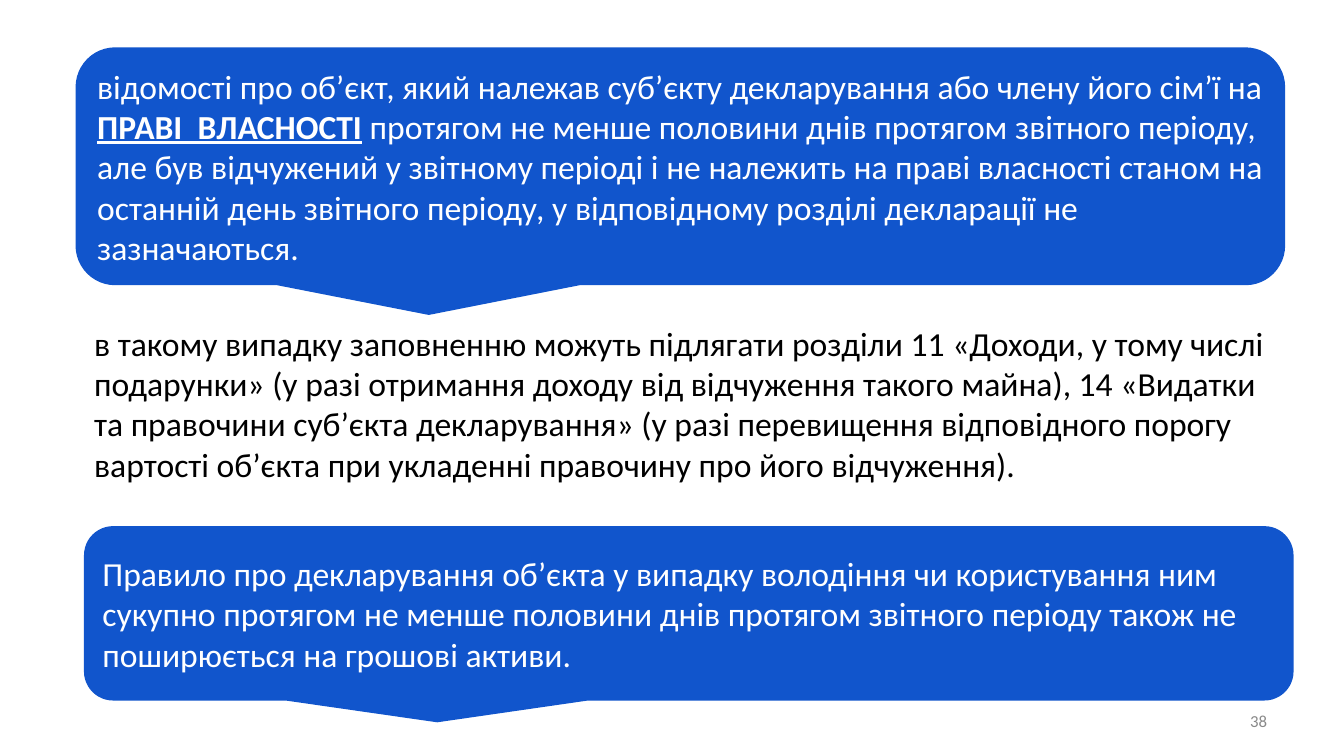
"""Build the slide on declaring alienated property and monetary assets."""
import dataclasses
import typing

import pptx
import pptx.dml.color
import pptx.enum.shapes
import pptx.enum.text
import pptx.oxml
import pptx.oxml.ns
import pptx.presentation
import pptx.shapes.autoshape
import pptx.slide
import pptx.text.text
import pptx.util

COLORS = {"callout": "1155CC", "light": "FFFFFF", "dark": "000000", "number": "898989"}
FONT = "Calibri"
COLUMNS, ROWS = 160, 90
CELL = pptx.util.Inches(1 / 12)
CALLOUT_ADJUSTMENTS = (-0.208, 0.625, 0.167)
ALIGN = pptx.enum.text.PP_ALIGN
ANCHOR = pptx.enum.text.MSO_ANCHOR


class Area(typing.NamedTuple):
    left: float
    top: float
    width: float
    height: float

    def lengths(self) -> list[int]:
        return [round(cells * CELL) for cells in self]


class Run(typing.NamedTuple):
    text: str
    emphasis: bool = False


@dataclasses.dataclass(frozen=True)
class Block:
    area: Area
    runs: tuple[Run, ...]
    color: str
    size: int = 24
    align: ALIGN = ALIGN.LEFT
    anchor: ANCHOR = ANCHOR.MIDDLE
    vertical_inset: float = 0.05


OWNERSHIP = Block(
    Area(9, 5.64, 144, 28.32),
    (
        Run("відомості про об’єкт, який належав суб’єкту декларування або члену його сім’ї на "),
        Run("ПРАВІ  ВЛАСНОСТІ", emphasis=True),
        Run(
            " протягом не менше половини днів протягом звітного періоду, але був відчужений "
            "у звітному періоді і не належить на праві власності станом на останній день "
            "звітного періоду, у відповідному розділі декларації не зазначаються."
        ),
    ),
    "light",
    vertical_inset=0.1,
)
SECTIONS = Block(
    Area(10, 37.8, 144, 20.76),
    (
        Run(
            "в такому випадку заповненню можуть підлягати розділи 11 «Доходи, у тому числі "
            "подарунки» (у разі отримання доходу від відчуження такого майна), 14 «Видатки та "
            "правочини суб’єкта декларування» (у разі перевищення відповідного порогу вартості "
            "об’єкта при укладенні правочину про його відчуження)."
        ),
    ),
    "dark",
    anchor=ANCHOR.TOP,
)
NUMBER = Block(Area(114.72, 83.4, 37.32, 4.8), (Run("38"),), "number", 12, ALIGN.RIGHT)
MONEY = Block(
    Area(10, 62.64, 144, 20.76),
    (
        Run(
            "Правило про декларування об’єкта у випадку володіння чи користування ним сукупно "
            "протягом не менше половини днів протягом звітного періоду також не поширюється на "
            "грошові активи."
        ),
    ),
    "light",
    vertical_inset=0.1,
)


def rgb(name: str) -> pptx.dml.color.RGBColor:
    return pptx.dml.color.RGBColor.from_string(COLORS[name])


def write(frame: pptx.text.text.TextFrame, block: Block) -> None:
    frame.word_wrap = True
    frame.auto_size = pptx.enum.text.MSO_AUTO_SIZE.NONE
    frame.vertical_anchor = block.anchor
    frame.margin_left = frame.margin_right = pptx.util.Inches(0.1)
    frame.margin_top = frame.margin_bottom = pptx.util.Inches(block.vertical_inset)
    paragraph = frame.paragraphs[0]
    paragraph.alignment = block.align
    paragraph.space_before = pptx.util.Pt(0)
    for item in block.runs:
        run = paragraph.add_run()
        run.text = item.text
        run.font.name = FONT
        run.font.size = pptx.util.Pt(block.size)
        run.font.bold = run.font.underline = item.emphasis
        run.font.color.rgb = rgb(block.color)


def draw_callout(slide: pptx.slide.Slide, block: Block) -> None:
    kind = pptx.enum.shapes.MSO_SHAPE.ROUNDED_RECTANGULAR_CALLOUT
    shape = slide.shapes.add_shape(kind, *block.area.lengths())
    for index, value in enumerate(CALLOUT_ADJUSTMENTS):
        shape.adjustments[index] = value
    shape.shadow.inherit = False
    shape.fill.solid()
    shape.fill.fore_color.rgb = rgb("callout")
    shape.line.fill.background()
    write(shape.text_frame, block)


def draw_body(slide: pptx.slide.Slide, block: Block) -> None:
    body = slide.placeholders[1]
    body.left, body.top, body.width, body.height = block.area.lengths()
    slide.shapes.element.append(body.element)
    write(body.text_frame, block)
    properties = body.text_frame.paragraphs[0]._p.get_or_add_pPr()
    properties.set("marL", "0")
    properties.set("indent", "0")
    properties.append(pptx.oxml.parse_xml(f"<a:buNone {pptx.oxml.ns.nsdecls('a')}/>"))


def draw_number(slide: pptx.slide.Slide, block: Block) -> None:
    write(slide.shapes.add_textbox(*block.area.lengths()).text_frame, block)


def main() -> None:
    presentation = pptx.Presentation()
    presentation.slide_width = COLUMNS * CELL
    presentation.slide_height = ROWS * CELL
    slide = presentation.slides.add_slide(presentation.slide_layouts[1])
    title = slide.shapes.title.element
    title.getparent().remove(title)
    draw_callout(slide, OWNERSHIP)
    draw_body(slide, SECTIONS)
    draw_number(slide, NUMBER)
    draw_callout(slide, MONEY)
    presentation.save("out.pptx")


if __name__ == "__main__":
    main()
